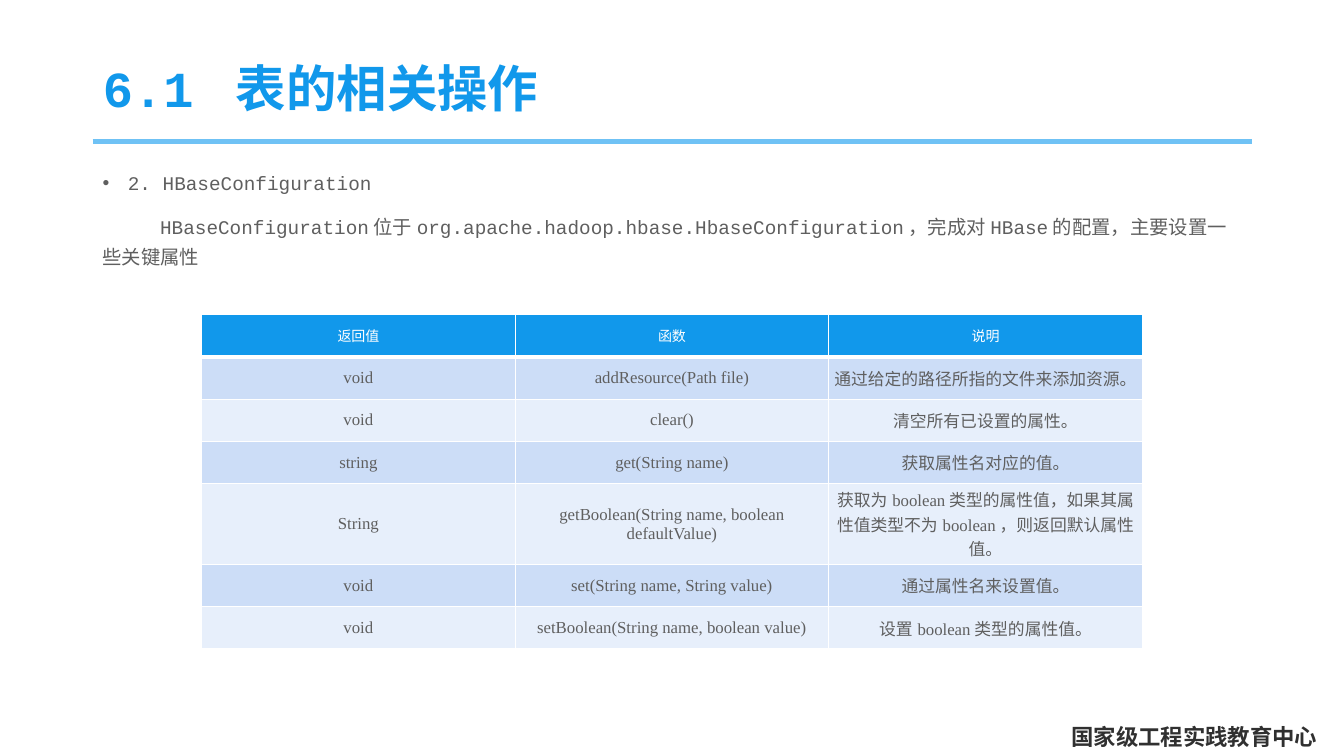
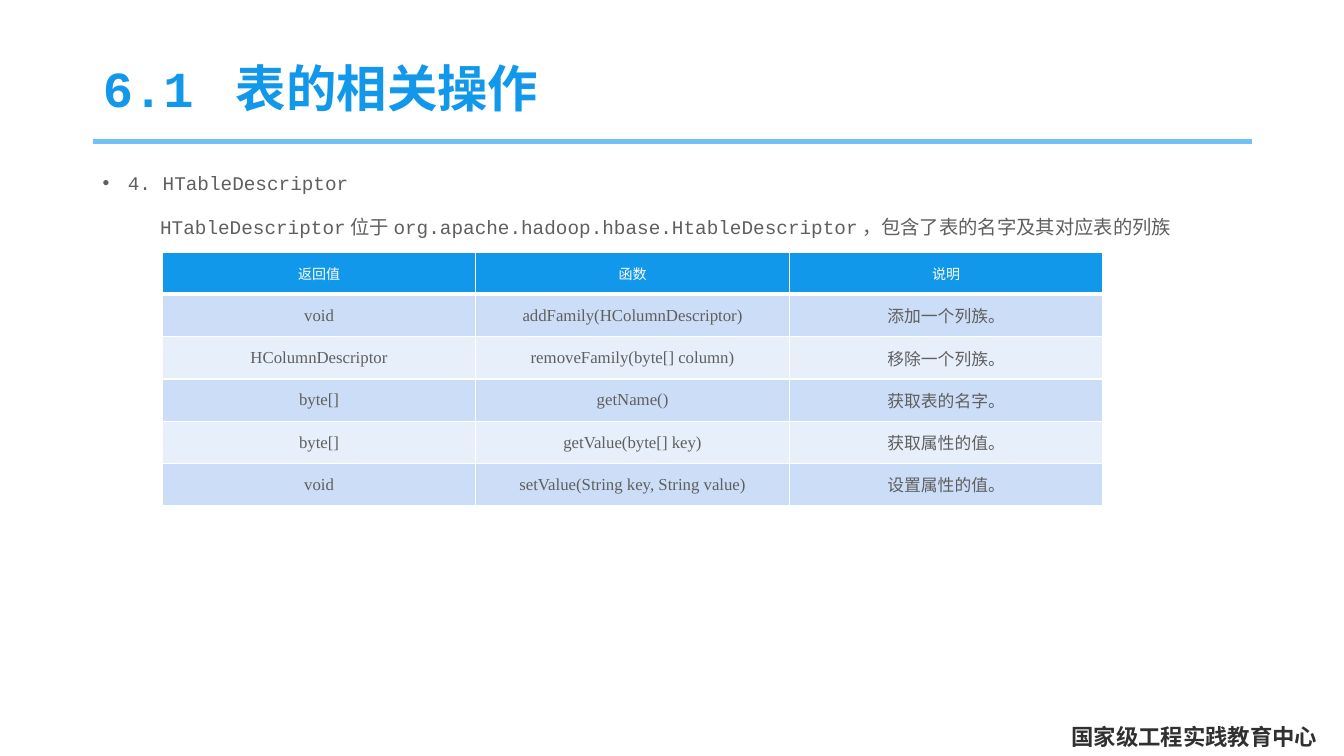
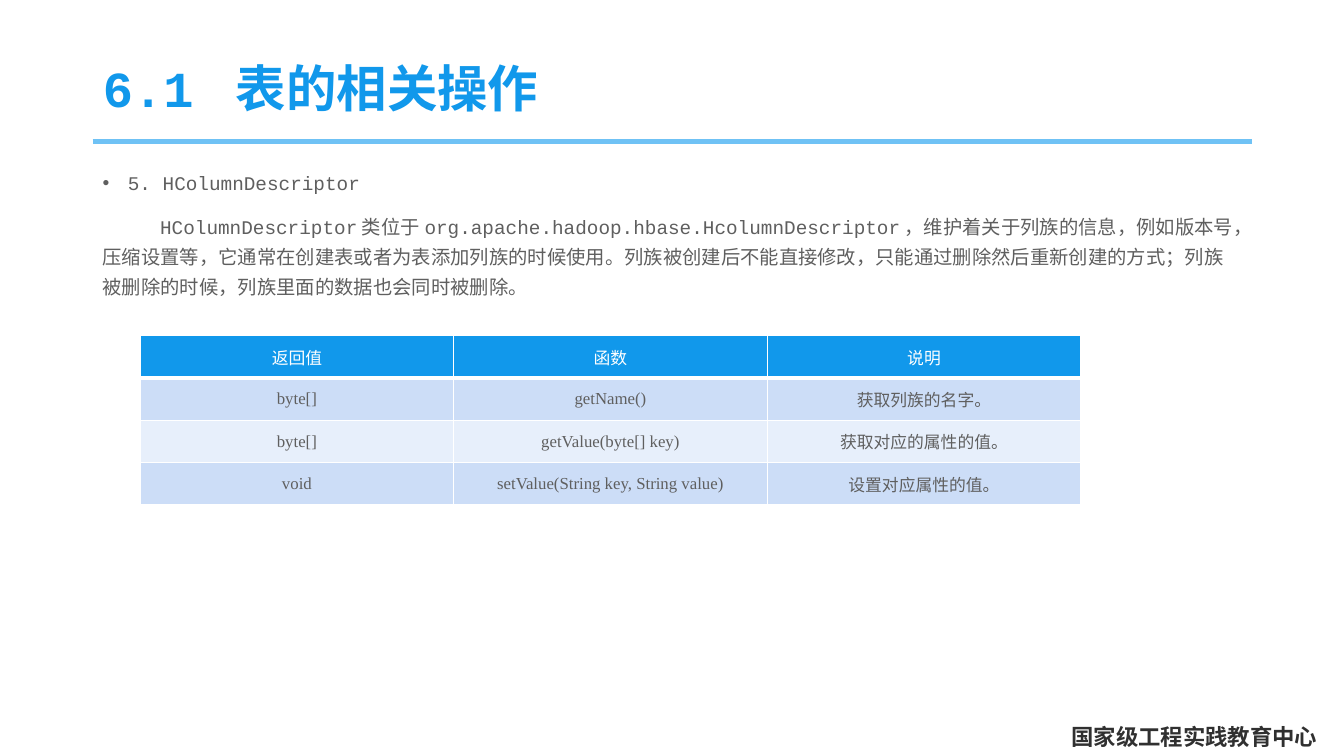
from lxml import etree
from pptx import Presentation
from pptx.dml.color import RGBColor
from pptx.enum.shapes import MSO_CONNECTOR
from pptx.enum.text import MSO_ANCHOR, PP_ALIGN
from pptx.oxml.ns import qn
from pptx.util import Inches, Pt

BLUE = RGBColor(0x11, 0x98, 0xEB)
LIGHT_BLUE = RGBColor(0x6F, 0xC2, 0xF5)
BAND_DARK = RGBColor(0xCC, 0xDD, 0xF7)
BAND_LIGHT = RGBColor(0xE7, 0xEF, 0xFB)
GREY = RGBColor(0x5F, 0x5F, 0x5F)
DARK = RGBColor(0x30, 0x30, 0x30)
WHITE = RGBColor(0xFF, 0xFF, 0xFF)

MONO = "Courier New"
SERIF = "Times New Roman"
HAN = "Noto Sans CJK SC"

LEFT, WIDTH = 0.92, 11.5
COL_W = 3.11
ROW_H, TALL_ROW_H = 0.42, 0.8
ONE_LINE = 20  # characters of a description that fit on one line
CELL_INSET = 0.03

TITLE = "6.1 表的相关操作"
FOOTER = "国家级工程实践教育中心"
HEADER = ("返回值", "函数", "说明")


def style(p, font, size, color, bold=False):
    p.font.name = font
    p.font.size = Pt(size)
    p.font.bold = bold
    p.font.color.rgb = color
    r_pr = p._p.get_or_add_pPr().find(qn("a:defRPr"))
    ea = etree.Element(qn("a:ea"), typeface=HAN)
    r_pr.find(qn("a:latin")).addnext(ea)


def add_frame(s):
    """Title, rule under it and footer, the same on every slide."""
    title = s.shapes.title
    title.left, title.top = Inches(LEFT), Inches(0.4)
    title.width, title.height = Inches(WIDTH), Inches(1)
    tf = title.text_frame
    tf.text = TITLE
    tf.vertical_anchor = MSO_ANCHOR.MIDDLE
    p = tf.paragraphs[0]
    p.alignment = PP_ALIGN.LEFT
    p.line_spacing = 0.9
    style(p, MONO, 36, BLUE, bold=True)

    rule = s.shapes.add_connector(
        MSO_CONNECTOR.STRAIGHT, Inches(LEFT), Inches(1.4),
        Inches(LEFT + WIDTH), Inches(1.4))
    rule.line.color.rgb = LIGHT_BLUE
    rule.line.width = Pt(3.5)
    etree.SubElement(rule._element.spPr, qn("a:effectLst"))

    footer = s.shapes.add_textbox(
        Inches(10.53), Inches(7.19), Inches(2.69), Inches(0.3))
    tf = footer.text_frame
    tf.word_wrap = True
    tf.vertical_anchor = MSO_ANCHOR.BOTTOM
    p = tf.paragraphs[0]
    p.text = FOOTER
    p.alignment = PP_ALIGN.JUSTIFY
    style(p, MONO, 16, DARK, bold=True)


def add_intro(s, heading, text):
    """Bulleted class name and an indented paragraph about it."""
    box = s.shapes.add_textbox(
        Inches(LEFT), Inches(1.58), Inches(WIDTH), Inches(1.5))
    tf = box.text_frame
    tf.word_wrap = True
    p = tf.paragraphs[0]
    p.text = heading
    p_pr = p._p.get_or_add_pPr()
    p_pr.set("marL", str(Inches(0.25)))
    p_pr.set("indent", str(-Inches(0.25)))
    etree.SubElement(p_pr, qn("a:buFont"), typeface="Arial")
    etree.SubElement(p_pr, qn("a:buChar"), char="•")

    p = tf.add_paragraph()
    p.text = text
    p.space_before = Pt(10)
    p._p.get_or_add_pPr().set("indent", str(Inches(0.57)))
    for p in tf.paragraphs:
        p.line_spacing = 1.3
        style(p, MONO, 13.8, GREY)


def set_borders(cell, bottom):
    tc_pr = cell._tc.get_or_add_tcPr()
    widths = {"lnL": 1, "lnR": 1, "lnT": 1, "lnB": bottom}
    for i, (side, width) in enumerate(widths.items()):
        ln = etree.Element(qn(f"a:{side}"), w=str(Pt(width)))
        fill = etree.SubElement(ln, qn("a:solidFill"))
        etree.SubElement(fill, qn("a:srgbClr"), val=str(WHITE))
        tc_pr.insert(i, ln)


def format_cell(cell, text, fill, size, color, bottom):
    cell.fill.solid()
    cell.fill.fore_color.rgb = fill
    cell.vertical_anchor = MSO_ANCHOR.MIDDLE
    cell.margin_left = cell.margin_right = Inches(CELL_INSET)
    cell.margin_top = cell.margin_bottom = Inches(CELL_INSET)
    p = cell.text_frame.paragraphs[0]
    p.text = text
    p.alignment = PP_ALIGN.CENTER
    style(p, SERIF, size, color)
    set_borders(cell, bottom)


def add_methods(s, left, top, methods, header_size):
    rows = [HEADER, *methods]
    heights = [TALL_ROW_H if len(row[-1]) > ONE_LINE else ROW_H
               for row in rows]
    table = s.shapes.add_table(
        len(rows), len(HEADER), Inches(left), Inches(top),
        Inches(COL_W * len(HEADER)), Inches(sum(heights))).table
    table.first_row = table.horz_banding = False
    for col in table.columns:
        col.width = Inches(COL_W)
    for i, (row, height) in enumerate(zip(rows, heights)):
        table.rows[i].height = Inches(height)
        if i == 0:
            look = (BLUE, header_size, WHITE, 3)
        else:
            look = (BAND_DARK if i % 2 else BAND_LIGHT, 12, GREY, 1)
        for j, text in enumerate(row):
            format_cell(table.cell(i, j), text, *look)


# heading, text, table left, table top, header size, methods
SLIDES = [
    ("2. HBaseConfiguration",
     "HBaseConfiguration位于org.apache.hadoop.hbase.HbaseConfiguration，"
     "完成对HBase的配置，主要设置一些关键属性",
     2, 3.12, 10, [
         ("void", "addResource(Path file)", "通过给定的路径所指的文件来添加资源。"),
         ("void", "clear()", "清空所有已设置的属性。"),
         ("string", "get(String name)", "获取属性名对应的值。"),
         ("String", "getBoolean(String name, boolean defaultValue)",
          "获取为boolean类型的属性值，如果其属性值类型不为boolean，则返回默认属性值。"),
         ("void", "set(String name, String value)", "通过属性名来设置值。"),
         ("void", "setBoolean(String name, boolean value)",
          "设置boolean类型的属性值。"),
     ]),
    ("4. HTableDescriptor",
     "HTableDescriptor位于org.apache.hadoop.hbase.HtableDescriptor，"
     "包含了表的名字及其对应表的列族",
     1.61, 2.5, 10, [
         ("void", "addFamily(HColumnDescriptor)", "添加一个列族。"),
         ("HColumnDescriptor", "removeFamily(byte[] column)", "移除一个列族。"),
         ("byte[]", "getName()", "获取表的名字。"),
         ("byte[]", "getValue(byte[] key)", "获取属性的值。"),
         ("void", "setValue(String key, String value)", "设置属性的值。"),
     ]),
    ("5. HColumnDescriptor",
     "HColumnDescriptor类位于org.apache.hadoop.hbase.HcolumnDescriptor，"
     "维护着关于列族的信息，例如版本号，压缩设置等，它通常在创建表或者为表添加"
     "列族的时候使用。列族被创建后不能直接修改，只能通过删除然后重新创建的方式；"
     "列族被删除的时候，列族里面的数据也会同时被删除。",
     1.39, 3.33, 12, [
         ("byte[]", "getName()", "获取列族的名字。"),
         ("byte[]", "getValue(byte[] key)", "获取对应的属性的值。"),
         ("void", "setValue(String key, String value)", "设置对应属性的值。"),
     ]),
]


def main():
    prs = Presentation()
    prs.slide_width, prs.slide_height = Inches(13.33), Inches(7.5)
    for heading, text, left, top, header_size, methods in SLIDES:
        s = prs.slides.add_slide(prs.slide_layouts[5])
        add_frame(s)
        add_intro(s, heading, text)
        add_methods(s, left, top, methods, header_size)
    prs.save("out.pptx")


if __name__ == "__main__":
    main()
